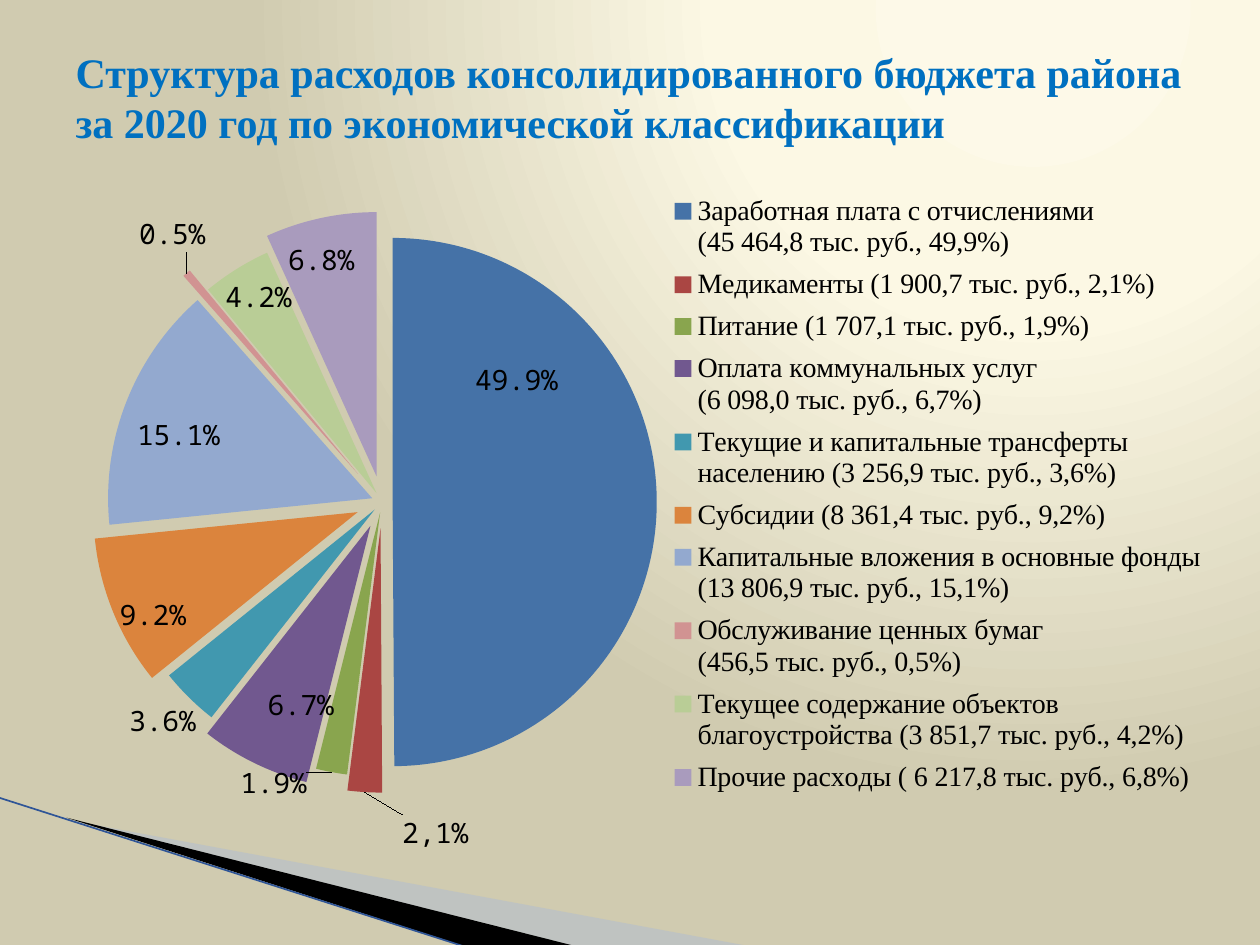
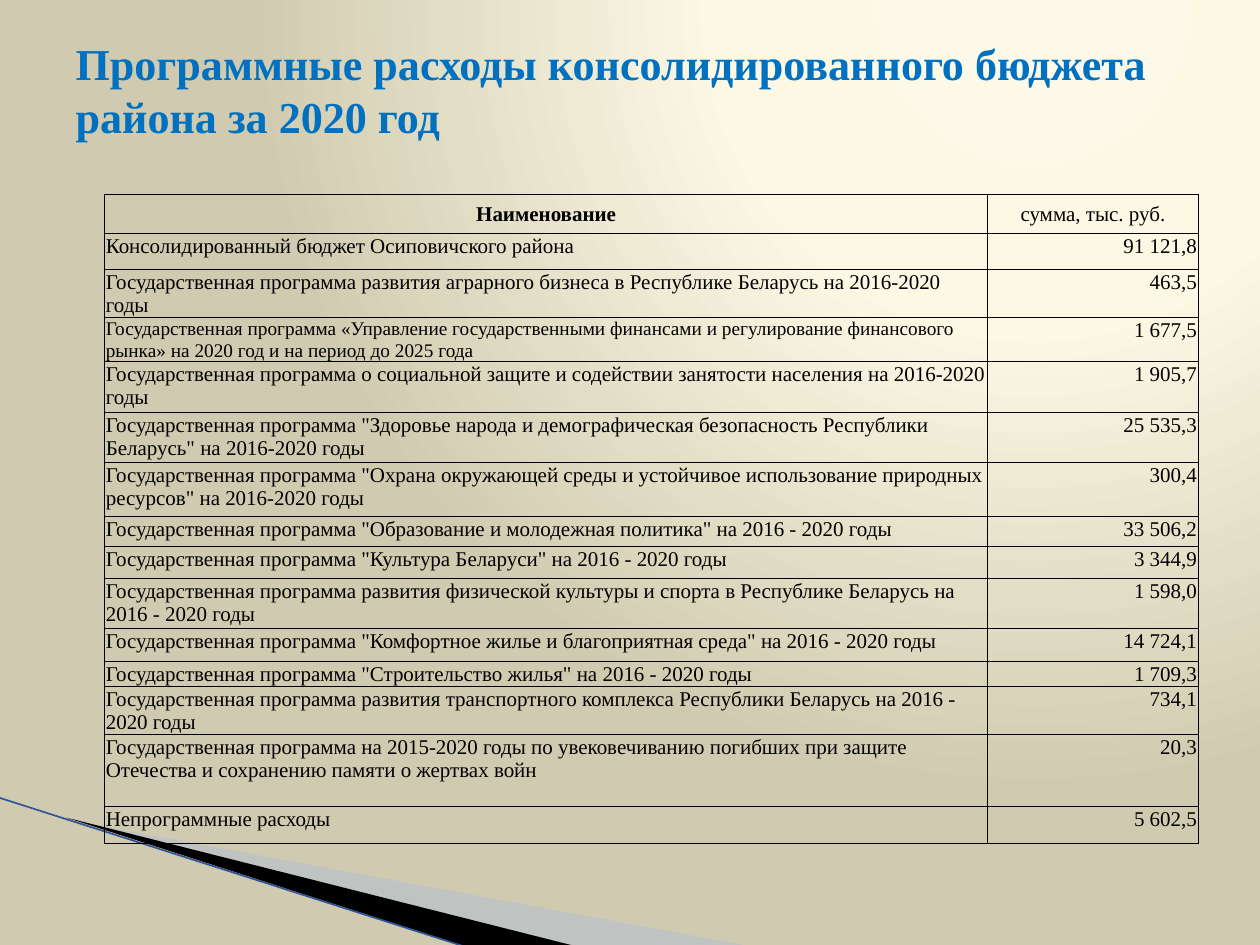
from pptx import Presentation, util as u
from pptx.chart import data as chart_data
from pptx.dml import color
from pptx.enum import chart as charts, shapes, text
from pptx.oxml import ns, parse_xml

SERIF, MONO = "Times New Roman", "Noto Sans Mono"
TITLE_BLUE, BLACK, RIBBON_BLUE, RIBBON_LINE = "0070C0", "000000", "A7B9DB", "2F5597"
BACKGROUND_STOPS = [(0, "FDF9E8"), (40, "FCF8E4"), (100, "D0CBB0")]
LABEL_FONT = {"size": u.Pt(16), "name": MONO}
OUTSIDE, CENTER = charts.XL_LABEL_POSITION.OUTSIDE_END, charts.XL_LABEL_POSITION.CENTER

# Category, share, slice colour, explosion, label position and offset from it
EXPENSES = [
    ("Заработная плата с отчислениями\n(45 464,8 тыс. руб., 49,9%)",
     0.499, "4572A7", 4, OUTSIDE, (-0.16, -0.16)),
    ("Медикаменты (1 900,7 тыс. руб., 2,1%)", 0.021, "AA4643", 10, OUTSIDE, (0.06, 0.02)),
    ("Питание (1 707,1 тыс. руб., 1,9%)", 0.019, "89A54E", 4, OUTSIDE, (-0.02, -0.02)),
    ("Оплата коммунальных услуг\n(6 098,0 тыс. руб., 6,7%)",
     0.067, "71588F", 10, OUTSIDE, (0.07, -0.11)),
    ("Текущие и капитальные трансферты населению (3 256,9 тыс. руб., 3,6%)",
     0.036, "4198AF", 4, OUTSIDE, (0.01, 0)),
    ("Субсидии (8 361,4 тыс. руб., 9,2%)", 0.092, "DB843D", 10, CENTER, (-0.07, 0.07)),
    ("Капитальные вложения в основные фонды (13 806,9 тыс. руб., 15,1%)",
     0.151, "93A9CF", 4, CENTER, (-0.06, -0.02)),
    ("Обслуживание ценных бумаг\n(456,5 тыс. руб., 0,5%)",
     0.005, "D19392", 14, OUTSIDE, (0.02, -0.02)),
    ("Текущее содержание объектов благоустройства (3 851,7 тыс. руб., 4,2%)",
     0.042, "B9CD96", 4, OUTSIDE, (0.05, 0.07)),
    ("Прочие расходы ( 6 217,8 тыс. руб., 6,8%)",
     0.068, "A99BBD", 10, OUTSIDE, (0.03, 0.09)),
]
CUSTOM_LABELS = {1: "2,1%"}

# Row height, programme, amount
PROGRAMMES = [
    (0.31, "Наименование", "сумма, тыс. руб."),
    (0.29, "Консолидированный бюджет Осиповичского района", "91 121,8"),
    (0.38, "Государственная программа развития аграрного бизнеса в Республике Беларусь "
           "на 2016-2020 годы", "463,5"),
    (0.35, "Государственная программа «Управление государственными финансами и регулирование "
           "финансового рынка» на 2020 год и на период до 2025 года", "1 677,5"),
    (0.4, "Государственная программа о социальной защите и содействии занятости населения "
          "на 2016-2020 годы", "1 905,7"),
    (0.4, 'Государственная программа "Здоровье народа и демографическая безопасность '
          'Республики Беларусь" на 2016-2020 годы', "25 535,3"),
    (0.43, 'Государственная программа "Охрана окружающей среды и устойчивое использование '
           'природных ресурсов" на 2016-2020 годы', "300,4"),
    (0.24, 'Государственная программа "Образование и молодежная политика" на 2016 - 2020 годы',
     "33 506,2"),
    (0.25, 'Государственная программа "Культура Беларуси" на 2016 - 2020 годы', "3 344,9"),
    (0.4, "Государственная программа развития физической культуры и спорта в Республике "
          "Беларусь на 2016 - 2020 годы", "1 598,0"),
    (0.26, 'Государственная программа "Комфортное жилье и благоприятная среда" '
           'на 2016 - 2020 годы', "14 724,1"),
    (0.2, 'Государственная программа "Строительство жилья" на 2016 - 2020 годы', "1 709,3"),
    (0.37, "Государственная программа развития транспортного комплекса Республики Беларусь "
           "на 2016 - 2020 годы", "734,1"),
    (0.57, "Государственная программа на 2015-2020 годы по увековечиванию погибших при защите "
           "Отечества и сохранению памяти о жертвах войн", "20,3"),
    (0.29, "Непрограммные расходы", "5 602,5"),
]
SMALL_ROW = 3
COLUMN_WIDTHS = (7.01, 1.67)


def rgb(hex_code):
    return color.RGBColor.from_string(hex_code)


def inches(*lengths):
    return [u.Inches(length) for length in lengths]


def apply(target, values):
    for name, value in values.items():
        setattr(target, name, value)


def style_font(font, values, hex_code=BLACK):
    apply(font, values)
    font.color.rgb = rgb(hex_code)


def xml(markup):
    """Parse markup whose root tag is followed by a space, adding namespaces."""
    return parse_xml(markup.replace(" ", f" {ns.nsdecls('a', 'c')} ", 1))


# Shared look, kept on the slide master
def set_background(master):
    master.background.fill.solid()
    stops = "".join(f'<a:gs pos="{pos * 1000}"><a:srgbClr val="{code}"/></a:gs>'
                    for pos, code in BACKGROUND_STOPS)
    gradient = xml(f'<a:gradFill rotWithShape="1"><a:gsLst>{stops}</a:gsLst><a:path path="circle">'
                   '<a:fillToRect l="65000" b="98000"/></a:path></a:gradFill>')
    solid = master.element.xpath("./p:cSld/p:bg/p:bgPr/a:solidFill")[0]
    solid.getparent().replace(solid, gradient)


def add_ribbon(slide, points, hex_code, alpha=100):
    start, *others = [inches(*point) for point in points]
    builder = slide.shapes.build_freeform(*start)
    builder.add_line_segments(others)
    ribbon = builder.convert_to_shape()
    ribbon.shadow.inherit = False
    ribbon.fill.solid()
    ribbon.fill.fore_color.rgb = rgb(hex_code)
    ribbon.line.fill.background()
    if alpha < 100:
        tint = ribbon.element.xpath("./p:spPr/a:solidFill/a:srgbClr")[0]
        tint.append(xml(f'<a:alpha val="{alpha * 1000}"/>'))
    return ribbon


def add_ribbon_edge(slide, start, end):
    edge = slide.shapes.add_connector(shapes.MSO_CONNECTOR.STRAIGHT, *inches(*start, *end))
    edge.line.color.rgb = rgb(RIBBON_LINE)
    edge.line.width = u.Pt(0.95)
    edge.element.spPr.append(xml("<a:effectLst />"))
    return edge


def decorate_master(master, slide):
    """Draw the corner ribbons on a slide and move them behind everything."""
    set_background(master)
    corner = [
        add_ribbon(slide, [(0.55, 6.51), (5.95, 7.51), (4.56, 7.51)], RIBBON_BLUE, 40),
        add_ribbon(slide, [(0.53, 6.49), (4.57, 7.51), (3.72, 7.52)], BLACK),
        add_ribbon_edge(slide, (-0.01, 6.33), (3.71, 7.52)),
    ]
    for depth, part in enumerate(corner, start=2):
        master.shapes.element.insert(depth, part.element)


def set_title(slide, wording, width, height, size):
    title = slide.shapes.title
    apply(title, dict(zip(("left", "top", "width", "height"), inches(0.5, 0.3, width, height))))
    frame = title.text_frame
    frame.text = wording
    apply(frame, {"word_wrap": True, "auto_size": text.MSO_AUTO_SIZE.NONE,
                  "vertical_anchor": text.MSO_ANCHOR.MIDDLE})
    heading = frame.paragraphs[0]
    heading.alignment = text.PP_ALIGN.LEFT
    style_font(heading.runs[0].font, {"size": u.Pt(size), "name": SERIF, "bold": True}, TITLE_BLUE)


# Pie chart
def manual_layout(x, y, size=None):
    target = mode = extent = ""
    if size:
        target = '<c:layoutTarget val="inner"/>'
        mode = '<c:xMode val="edge"/><c:yMode val="edge"/>'
        extent = f'<c:w val="{size[0]}"/><c:h val="{size[1]}"/>'
    return xml(f'<c:layout ><c:manualLayout>{target}{mode}<c:x val="{x}"/><c:y val="{y}"/>'
               f'{extent}</c:manualLayout></c:layout>')


def place_plot_and_legend(chart):
    plot_area = chart.element.xpath(".//c:plotArea")[0]
    for automatic in plot_area.xpath("./c:layout"):
        plot_area.remove(automatic)
    plot_area.insert(0, manual_layout(0.06, 0.11, (0.45, 0.7)))

    chart.has_legend = True
    apply(chart.legend, {"position": charts.XL_LEGEND_POSITION.RIGHT, "include_in_layout": False})
    style_font(chart.legend.font, {"size": u.Pt(16), "name": SERIF})
    legend = chart.element.xpath(".//c:legend")[0]
    for automatic in legend.xpath("./c:layout"):
        legend.remove(automatic)
    placed = manual_layout(0.53, 0.04, (0.45, 0.82))
    placed[0].remove(placed[0][0])
    legend.xpath("./c:legendPos")[0].addnext(placed)


def format_slice(chart, index, hex_code, explosion, position, offset):
    part = chart.plots[0].series[0].points[index]
    part.format.fill.solid()
    part.format.fill.fore_color.rgb = rgb(hex_code)
    outline = chart.element.xpath(f".//c:dPt[c:idx/@val='{index}']/c:spPr")[0]
    outline.addprevious(xml(f'<c:explosion val="{explosion}"/>'))

    label = part.data_label
    if index in CUSTOM_LABELS:
        label.text_frame.text = CUSTOM_LABELS[index]
        style_font(label.text_frame.paragraphs[0].runs[0].font, LABEL_FONT)
    else:
        style_font(label.font, LABEL_FONT)
    label.position = position
    label_idx = chart.element.xpath(f".//c:dLbl/c:idx[@val='{index}']")[0]
    label_idx.addnext(manual_layout(*offset))


def keep_labels_on_one_line(chart):
    for body in chart.element.xpath(".//c:dLbls//a:bodyPr"):
        body.set("wrap", "none")


def add_expense_pie(slide):
    shares = chart_data.CategoryChartData(number_format="0.0%")
    shares.categories = [row[0] for row in EXPENSES]
    shares.add_series("Series 1", [row[1] for row in EXPENSES])
    chart = slide.shapes.add_chart(charts.XL_CHART_TYPE.PIE,
                                   *inches(0.36, 1.23, 9.38, 5.99), shares).chart
    chart.has_title = False
    style_font(chart.font, {"size": u.Pt(18), "name": MONO})
    chart.plots[0].vary_by_categories = True
    place_plot_and_legend(chart)

    labels = chart.plots[0].series[0].data_labels
    apply(labels, {"show_value": True, "number_format": "0.0%", "number_format_is_linked": False,
                   "position": OUTSIDE})
    style_font(labels.font, LABEL_FONT)
    for index, (_, _, *slice_format) in enumerate(EXPENSES):
        format_slice(chart, index, *slice_format)
    keep_labels_on_one_line(chart)


# Programme table
def set_borders(cell):
    properties = cell._tc.get_or_add_tcPr()
    for depth, side in enumerate("LRTB"):
        properties.insert(depth, xml(
            f'<a:ln{side} w="6350"><a:solidFill><a:srgbClr val="{BLACK}"/></a:solidFill>'
            f'</a:ln{side}>'))


def fill_cell(cell, wording, alignment, anchor, size, bold):
    cell.text = wording
    margin = u.Inches(0.01)
    apply(cell, {"margin_left": margin, "margin_right": margin, "margin_top": margin,
                 "margin_bottom": 0, "vertical_anchor": anchor})
    cell.fill.background()
    set_borders(cell)
    paragraph = cell.text_frame.paragraphs[0]
    paragraph.alignment = alignment
    style_font(paragraph.runs[0].font, {"size": u.Pt(size), "name": SERIF, "bold": bold})


def add_programme_table(slide):
    height = sum(row[0] for row in PROGRAMMES)
    table = slide.shapes.add_table(len(PROGRAMMES), len(COLUMN_WIDTHS),
                                   *inches(0.83, 1.54, sum(COLUMN_WIDTHS), height)).table
    apply(table, {"first_row": False, "horz_banding": False})
    for column, width in zip(table.columns, COLUMN_WIDTHS):
        column.width = u.Inches(width)
    for r, (row_height, *wordings) in enumerate(PROGRAMMES):
        table.rows[r].height = u.Inches(row_height)
        header = r == 0
        anchor = text.MSO_ANCHOR.MIDDLE if header else text.MSO_ANCHOR.TOP
        for c, wording in enumerate(wordings):
            side = (text.PP_ALIGN.LEFT, text.PP_ALIGN.RIGHT)[c]
            fill_cell(table.cell(r, c), wording, text.PP_ALIGN.CENTER if header else side, anchor,
                      size=11 if (r, c) == (SMALL_ROW, 0) else 12, bold=header and c == 0)


def main():
    prs = Presentation()
    prs.slide_width, prs.slide_height = inches(10, 7.5)
    title_only = prs.slide_layouts[5]

    structure = prs.slides.add_slide(title_only)
    decorate_master(prs.slide_master, structure)
    set_title(structure, "Структура расходов консолидированного бюджета района за 2020 год "
              "по экономической классификации", 9.15, 0.93, 24)
    add_expense_pie(structure)

    programmes = prs.slides.add_slide(title_only)
    set_title(programmes, "Программные расходы консолидированного бюджета района за 2020 год",
              9, 0.82, 25.2)
    add_programme_table(programmes)

    prs.save("out.pptx")


if __name__ == "__main__":
    main()
